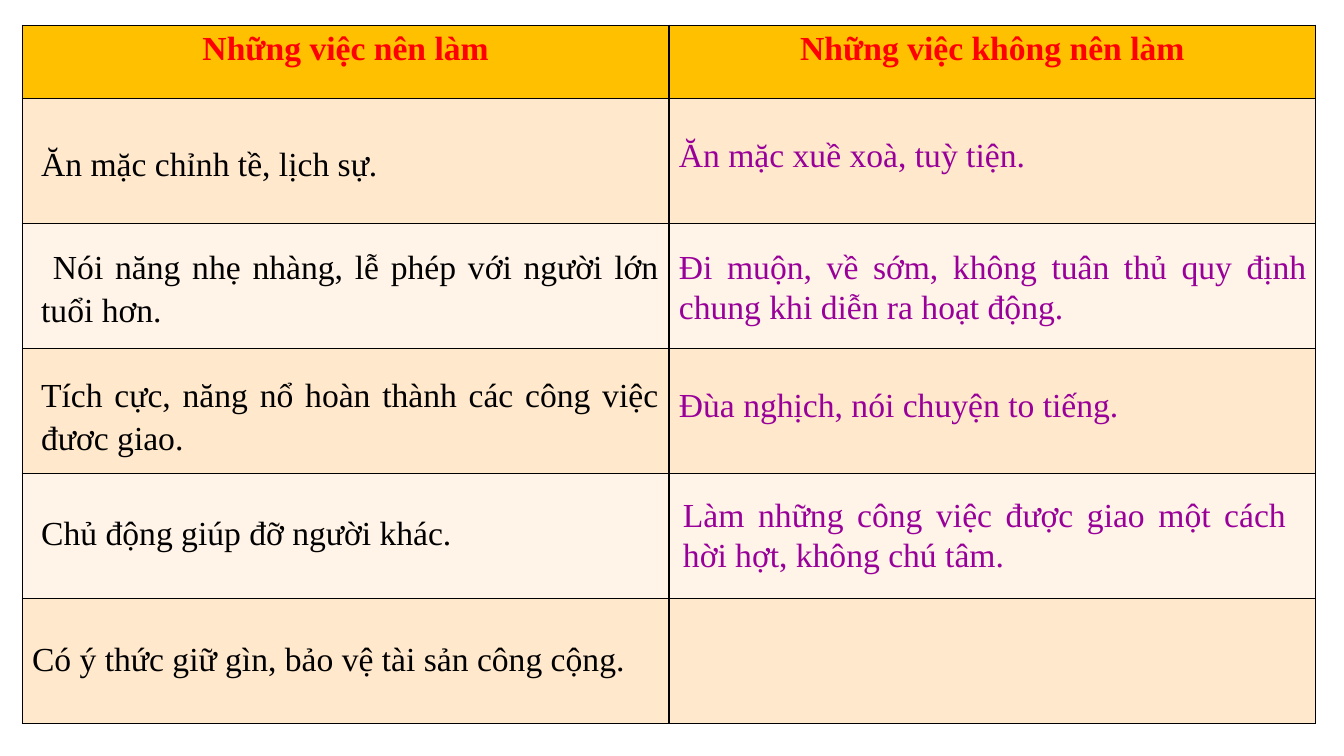
from lxml import etree
from pptx import Presentation
from pptx import util as u
from pptx.dml import color
from pptx.enum import text
from pptx.oxml import ns

FONT = "Times New Roman"
HEADER_HEIGHT = 0.73
ROW_HEIGHT = 1.24
HEADINGS = ["Những việc nên làm", "Những việc không nên làm"]
ROW_FILLS = ["FFC000", "FFE8CC", "FFF4E7", "FFE8CC", "FFF4E7", "FFE8CC"]

# (text, left offset, top offset within the row, width, height, wraps, line spacing)
DOS = [
    ("Ăn mặc chỉnh tề, lịch sự.", 0.09, 0.36, 3.57, 0.53, False, 1.07),
    (" Nói năng nhẹ nhàng, lễ phép với người lớn tuổi hơn.", 0.09, 0.14, 6.32, 0.97, True, 1.07),
    ("Tích cực, năng nổ hoàn thành các công việc đươc giao.", 0.09, 0.17, 6.32, 0.97, True, 1.07),
    ("Chủ động giúp đỡ người khác.", 0.09, 0.3, 4.31, 0.53, False, 1.07),
    ("Có ý thức giữ gìn, bảo vệ tài sản công cộng.", 0, 0.34, 6.13, 0.5, False, 1),
]
DONTS = [
    ("Ăn mặc xuề xoà, tuỳ tiện.", 0, 0.3, 3.67, 0.5, False, 1),
    ("Đi muộn, về sớm, không tuân thủ quy định chung khi diễn ra hoạt động.",
     0, 0.17, 6.42, 0.91, True, 1),
    ("Đùa nghịch, nói chuyện to tiếng.", 0, 0.3, 4.6, 0.5, False, 1),
    ("Làm những công việc được giao một cách hời hợt, không chú tâm.",
     0.04, 0.15, 6.18, 0.91, True, 1),
]


def rgb(value):
    return color.RGBColor.from_string(value)


def write(frame, content, font_color="000000", size=24, bold=False,
          align=text.PP_ALIGN.JUSTIFY, spacing=1):
    paragraph = frame.paragraphs[0]
    paragraph.alignment = align
    paragraph.line_spacing = spacing
    run = paragraph.add_run()
    run.text = content
    run.font.name = FONT
    run.font.size = u.Pt(size)
    run.font.bold = bold
    run.font.color.rgb = rgb(font_color)


def add_borders(cell):
    properties = cell._tc.get_or_add_tcPr()
    for position, side in enumerate(("a:lnL", "a:lnR", "a:lnT", "a:lnB")):
        line = etree.Element(ns.qn(side), w=str(u.Pt(1)))
        fill = etree.SubElement(line, ns.qn("a:solidFill"))
        etree.SubElement(fill, ns.qn("a:srgbClr"), val="000000")
        properties.insert(position, line)


def add_grid(slide, left, top, width):
    heights = [HEADER_HEIGHT] + [ROW_HEIGHT] * (len(ROW_FILLS) - 1)
    table = slide.shapes.add_table(
        len(heights), len(HEADINGS), u.Inches(left), u.Inches(top),
        u.Inches(width), u.Inches(sum(heights))).table
    for column in table.columns:
        column.width = u.Inches(width / len(HEADINGS))
    for row, height, fill in zip(table.rows, heights, ROW_FILLS):
        row.height = u.Inches(height)
        for cell in row.cells:
            cell.fill.solid()
            cell.fill.fore_color.rgb = rgb(fill)
            add_borders(cell)
    for cell, heading in zip(table.rows[0].cells, HEADINGS):
        write(cell.text_frame, heading, font_color="FF0000", bold=True,
              align=text.PP_ALIGN.CENTER)


def add_behaviours(slide, left, top, behaviours, font_color):
    for index, (content, dx, dy, width, height, wraps, spacing) in enumerate(behaviours):
        box = slide.shapes.add_textbox(
            u.Inches(left + dx), u.Inches(top + index * ROW_HEIGHT + dy),
            u.Inches(width), u.Inches(height))
        frame = box.text_frame
        frame.word_wrap = wraps
        frame.auto_size = text.MSO_AUTO_SIZE.SHAPE_TO_FIT_TEXT
        write(frame, content, font_color=font_color, spacing=spacing)


def add_behaviour_slide(presentation, left, top, width):
    slide = presentation.slides.add_slide(presentation.slide_layouts[6])
    add_grid(slide, left, top, width)
    first_row = top + HEADER_HEIGHT
    add_behaviours(slide, left, first_row, DOS, "000000")
    add_behaviours(slide, left + width / 2, first_row, DONTS, "990099")


def main():
    presentation = Presentation()
    presentation.slide_width = u.Inches(13.33)
    presentation.slide_height = u.Inches(7.5)
    add_behaviour_slide(presentation, 0.22, 0.25, 12.83)
    presentation.save("out.pptx")


if __name__ == "__main__":
    main()
